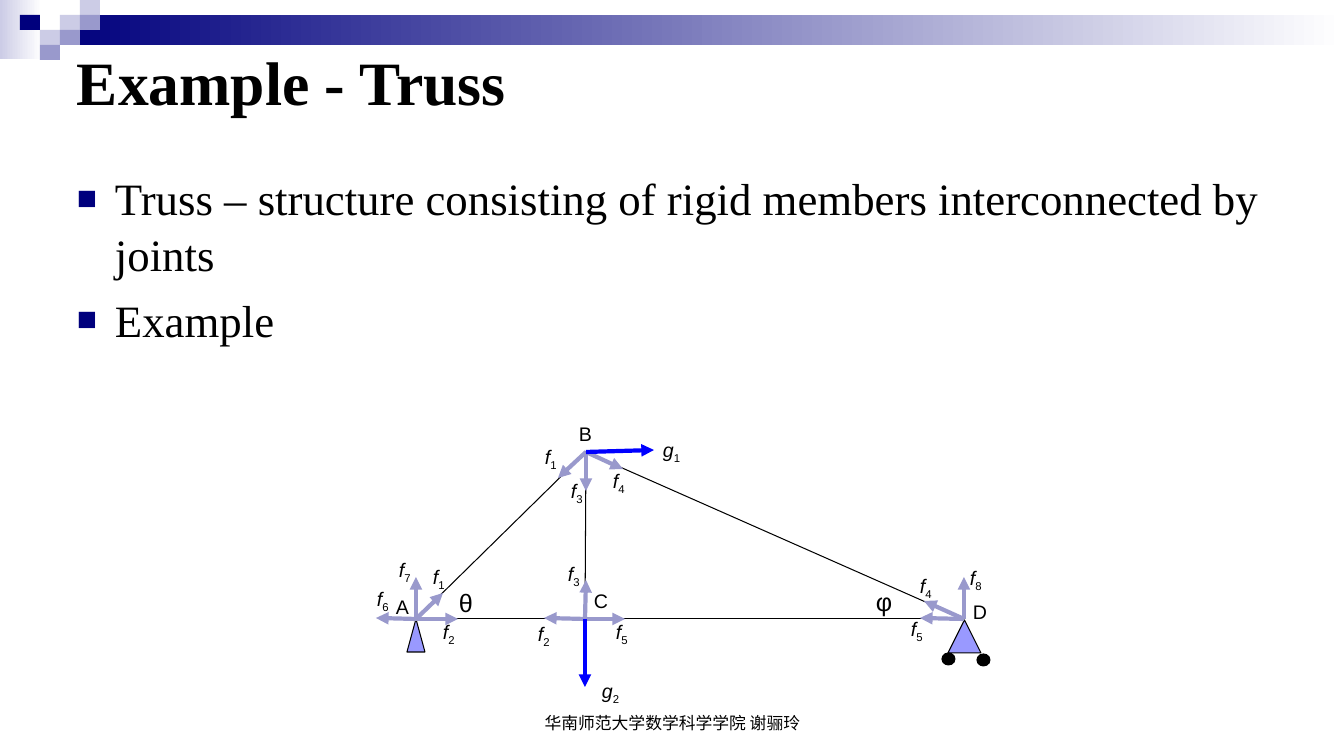
from lxml import etree
from pptx import Presentation
from pptx.dml.color import RGBColor
from pptx.enum.shapes import MSO_CONNECTOR, MSO_SHAPE
from pptx.enum.text import MSO_ANCHOR, PP_ALIGN
from pptx.oxml.ns import qn
from pptx.util import Pt

RECTANGLE, TRIANGLE, OVAL = MSO_SHAPE.RECTANGLE, MSO_SHAPE.ISOSCELES_TRIANGLE, MSO_SHAPE.OVAL
STRAIGHT = MSO_CONNECTOR.STRAIGHT
TOP, MIDDLE, BOTTOM = MSO_ANCHOR.TOP, MSO_ANCHOR.MIDDLE, MSO_ANCHOR.BOTTOM
LEFT, CENTER = PP_ALIGN.LEFT, PP_ALIGN.CENTER

EMU_PER_PX = 914400 / 100.8
NAVY, LILAC, PALE, WHITE, BLACK = "00007D", "9999CC", "CCCCE6", "FFFFFF", "000000"
SUPPORT, LOAD = "9999FF", "0000FF"
SERIF, SANS = "Times New Roman", "Arial"

TITLE = "Example - Truss"
BULLETS = ["Truss – structure consisting of rigid members interconnected by joints", "Example"]
FOOTER = "华南师范大学数学科学学院 谢骊玲"

# Boxes are (left, top, width, height) in px
TITLE_BOX = (67, 5, 1210, 151)
BODY_BOX = (67, 163, 1210, 540)
FOOTER_BOX = (460, 688, 425, 50)
BANDS = [((0, 0, 42, 59), PALE), ((60, 15, 1284, 30), NAVY)]
TILE_WIDTH, TILE_HEIGHT = 20, 15
# Header tiles: (column, row, colour)
TILES = [(3, 1, PALE), (4, 0, PALE), (4, 1, LILAC), (2, 2, PALE),
         (1, 1, NAVY), (3, 2, LILAC), (2, 3, LILAC)]

JOINTS = {"A": (416, 619), "B": (586, 452), "C": (585, 619), "D": (964, 619)}
MEMBERS = ["AD", "AB", "BD", "BC"]
SUPPORTS = [
    (TRIANGLE, (407, 619, 18, 33), SUPPORT),
    (TRIANGLE, (948, 620, 33, 33), SUPPORT),
    (OVAL, (942, 653, 13, 12), BLACK),
    (OVAL, (977, 654, 13, 12), BLACK),
]
# Forces: (joint, x and y reach of the arrow, colour)
FORCES = [
    ("A", 27, -26, LILAC), ("B", -28, 26, LILAC), ("B", 37, 17, LILAC),
    ("D", -40, -18, LILAC), ("D", -44, -1, LILAC), ("A", 42, 0, LILAC),
    ("C", 40, 0, LILAC), ("C", -41, -1, LILAC), ("C", 1, -39, LILAC),
    ("B", 0, 39, LILAC), ("C", 0, 68, LOAD), ("B", 68, -2, LOAD),
    ("D", 0, -42, LILAC), ("A", 0, -42, LILAC), ("A", -40, -1, LILAC),
]
# Labels: (letter, subscript, left, top)
LABELS = [
    ("g", "1", 653, 433), ("g", "2", 592, 674), ("f", "8", 960, 561), ("f", "4", 910, 569),
    ("f", "5", 901, 612), ("f", "5", 606, 615), ("f", "3", 558, 557), ("f", "2", 528, 617),
    ("f", "2", 433, 615), ("f", "6", 367, 582), ("f", "7", 389, 553), ("f", "1", 423, 560),
    ("f", "1", 535, 440), ("f", "3", 561, 474), ("f", "4", 603, 464),
    ("A", "", 386, 590), ("B", "", 569, 417), ("C", "", 584, 584), ("D", "", 963, 595),
    ("θ", "", 449, 582), ("φ", "", 866, 581),
]


def px(value):
    return round(value * EMU_PER_PX)


def color(hex_string):
    return RGBColor.from_string(hex_string)


def set_all(target, values):
    for name, value in values.items():
        setattr(target, name, value)


def place(shape, box):
    set_all(shape, dict(zip(("left", "top", "width", "height"), map(px, box))))


def add_run(paragraph, text, size, name=SANS, **values):
    run = paragraph.add_run()
    run.text = text
    set_all(run.font, {"size": Pt(size), "name": name, **values})
    run.font.color.rgb = color(BLACK)
    return run


def format_frame(shape, anchor=TOP, wrap=True):
    """Give a text frame the usual insets and return its first paragraph."""
    frame = shape.text_frame
    set_all(frame, {"word_wrap": wrap, "vertical_anchor": anchor,
                    "margin_left": px(10), "margin_right": px(10),
                    "margin_top": px(5), "margin_bottom": px(5)})
    return frame.paragraphs[0]


def add_text_box(slide, box, **values):
    return format_frame(slide.shapes.add_textbox(*map(px, box)), **values)


def add_bullet(paragraph):
    properties = paragraph._p.get_or_add_pPr()
    properties.set("marL", str(px(38)))
    properties.set("indent", str(px(-38)))
    bullet_color = etree.SubElement(properties, qn("a:buClr"))
    etree.SubElement(bullet_color, qn("a:srgbClr"), val=NAVY)
    etree.SubElement(properties, qn("a:buSzPct"), val="75000")
    etree.SubElement(properties, qn("a:buFont"), typeface=SANS)
    etree.SubElement(properties, qn("a:buChar"), char="■")


def add_shape(slide, kind, box, fill, outline=None):
    shape = slide.shapes.add_shape(kind, *map(px, box))
    shape.shadow.inherit = False
    shape.fill.solid()
    shape.fill.fore_color.rgb = color(fill)
    if outline:
        shape.line.color.rgb = color(outline)
        shape.line.width = Pt(0.75)
    else:
        shape.line.fill.background()
    return shape


def add_line(slide, start, end, line_color, width, arrow=False):
    connector = slide.shapes.add_connector(STRAIGHT, *map(px, start + end))
    connector.line.color.rgb = color(line_color)
    connector.line.width = Pt(width)
    if arrow:
        etree.SubElement(connector.line._get_or_add_ln(), qn("a:tailEnd"), type="triangle")
    etree.SubElement(connector._element.spPr, qn("a:effectLst"))


def add_header(slide):
    for box, start_color in BANDS:
        band = add_shape(slide, RECTANGLE, box, start_color)
        band.fill.gradient()
        band.fill.gradient_angle = 0
        for stop, stop_color, position in zip(band.fill.gradient_stops, (start_color, WHITE), (0, 1)):
            stop.color.rgb = color(stop_color)
            stop.position = position
    for column, row, fill in TILES:
        box = (column * TILE_WIDTH, row * TILE_HEIGHT, TILE_WIDTH, TILE_HEIGHT)
        add_shape(slide, RECTANGLE, box, fill)


def add_words(slide):
    title = slide.shapes.title
    place(title, TITLE_BOX)
    paragraph = format_frame(title, anchor=MIDDLE)
    paragraph.alignment = LEFT
    add_run(paragraph, TITLE, 44, SERIF, bold=True)

    paragraph = add_text_box(slide, BODY_BOX)
    for index, text in enumerate(BULLETS):
        if index:
            paragraph = slide.shapes[-1].text_frame.add_paragraph()
            paragraph.space_before = Pt(6.4)
        paragraph.line_spacing = 1.05
        add_bullet(paragraph)
        add_run(paragraph, text, 32, SERIF)

    paragraph = add_text_box(slide, FOOTER_BOX, anchor=BOTTOM)
    paragraph.alignment = CENTER
    add_run(paragraph, FOOTER, 12, SERIF)


def add_truss(slide):
    for start, end in MEMBERS:
        add_line(slide, JOINTS[start], JOINTS[end], BLACK, 0.75)
    for kind, box, fill in SUPPORTS:
        add_shape(slide, kind, box, fill, BLACK)
    for joint, reach_x, reach_y, line_color in FORCES:
        x, y = JOINTS[joint]
        add_line(slide, (x, y), (x + reach_x, y + reach_y), line_color, 3, arrow=True)
    for letter, subscript, left, top in LABELS:
        is_angle = letter in "θφ"
        box = (left, top, 38 if letter == "g" else 33, 40 if is_angle else 34)
        paragraph = add_text_box(slide, box, wrap=False)
        add_run(paragraph, letter, 18 if is_angle else 14, italic=bool(subscript))
        if subscript:
            run = add_run(paragraph, subscript, 14)
            run.font._element.set("baseline", "-25000")


def main():
    presentation = Presentation()
    set_all(presentation, {"slide_width": px(1344), "slide_height": px(756)})
    slide = presentation.slides.add_slide(presentation.slide_layouts[5])
    add_header(slide)
    add_words(slide)
    add_truss(slide)
    presentation.save("out.pptx")


if __name__ == "__main__":
    main()
